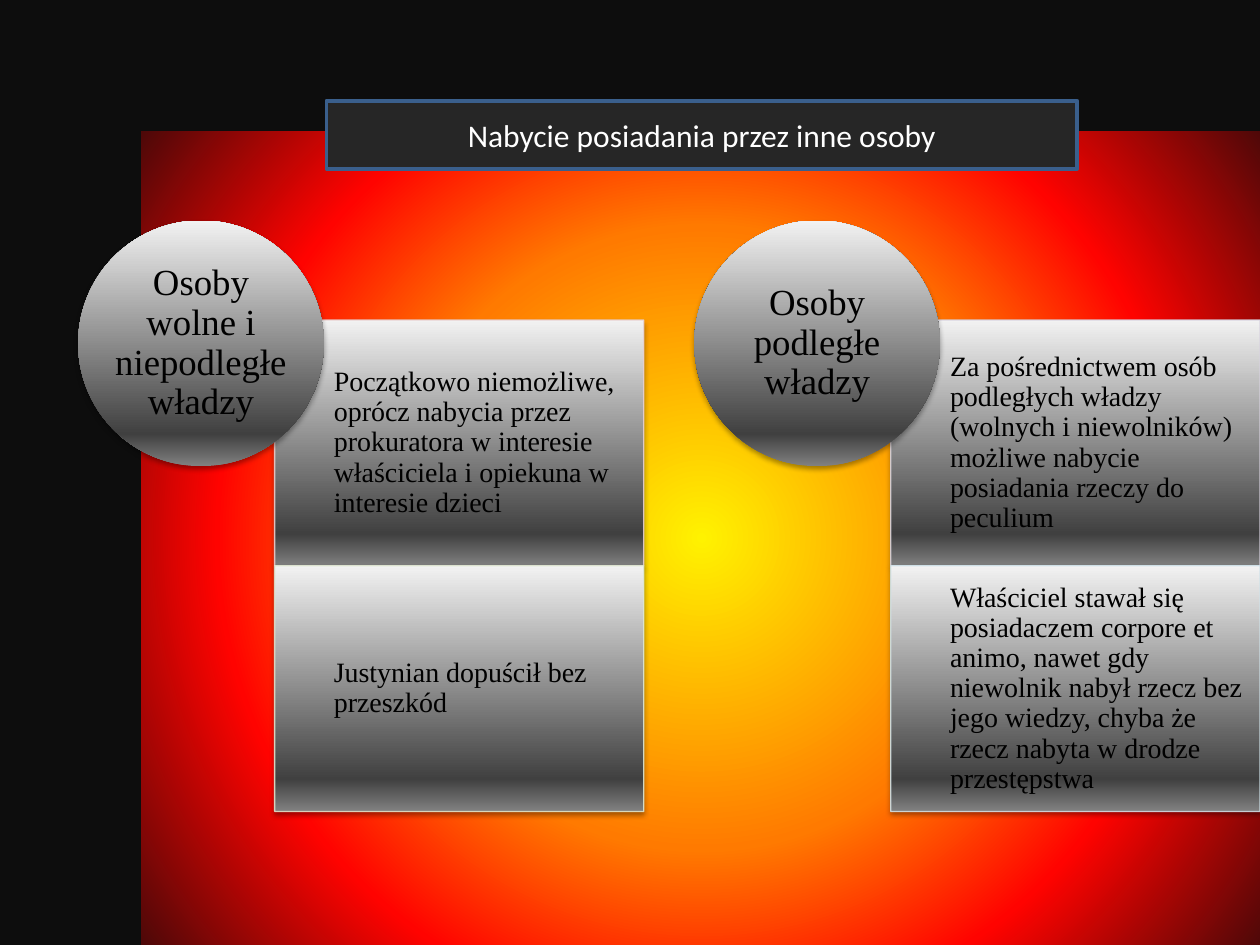
"""Build a slide on acquiring possession through other persons."""
from lxml import etree
from pptx import Presentation
from pptx.dml.color import RGBColor
from pptx.enum.shapes import MSO_SHAPE as SHAPE
from pptx.enum.text import MSO_ANCHOR as ANCHOR, MSO_AUTO_SIZE as AUTO_SIZE, PP_ALIGN as ALIGN
from pptx.oxml import parse_xml
from pptx.oxml.ns import nsdecls, qn
from pptx.util import Inches, Pt

COLORS = {
    "background": "0D0D0D", "title_fill": "262626", "title_line": "3A5F8C",
    "title_text": "FFFFFF", "text": "000000",
}
STEEL = [(0, "808080"), (13, "404040"), (100, "F2F2F2")]
FIRE = [(0, "FFF200"), (45, "FF7A00"), (70, "FF0300"), (100, "4D0808")]
UPWARD = '<a:lin ang="16200000" scaled="0"/>'
CENTRE = '<a:path path="circle"><a:fillToRect l="50000" t="50000" r="50000" b="50000"/></a:path>'
SERIF = "Times New Roman"
SIZE = 1.95
CARD_WIDTH = 2.93
COLUMNS = [
    (0.62, "Osoby wolne i niepodległe władzy", [
        ("E8D0D0", "Początkowo niemożliwe, oprócz nabycia przez prokuratora w interesie "
                   "właściciela i opiekuna w interesie dzieci"),
        ("DEE7D1", "Justynian dopuścił bez przeszkód"),
    ]),
    (5.51, "Osoby podległe władzy", [
        ("D8D3E0", "Za pośrednictwem osób podległych władzy (wolnych i niewolników) "
                   "możliwe nabycie posiadania rzeczy do peculium"),
        ("D0E3EA", "Właściciel stawał się posiadaczem corpore et animo, nawet gdy niewolnik "
                   "nabył rzecz bez jego wiedzy, chyba że rzecz nabyta w drodze przestępstwa"),
    ]),
]


def add_gradient_shape(kind, box, stops, direction, line=None, shadow=True):
    shape = slide.shapes.add_shape(kind, *map(Inches, box))
    shape.fill.background()
    properties = shape._element.spPr
    stop_xml = "".join(
        f'<a:gs pos="{position * 1000}"><a:srgbClr val="{color}"/></a:gs>' for position, color in stops)
    gradient = parse_xml(
        f'<a:gradFill {nsdecls("a")} rotWithShape="1"><a:gsLst>{stop_xml}</a:gsLst>{direction}</a:gradFill>')
    properties.replace(properties.find(qn("a:noFill")), gradient)
    if line:
        shape.line.color.rgb = RGBColor.from_string(line)
        shape.line.width = Pt(0.75)
        line_color = properties.find(qn("a:ln")).find(".//" + qn("a:srgbClr"))
        etree.SubElement(line_color, qn("a:alpha"), val="90000")
    else:
        shape.line.fill.background()
    shape.shadow.inherit = False
    if shadow:
        properties.find(qn("a:effectLst")).append(parse_xml(
            f'<a:outerShdw {nsdecls("a")} blurRad="40000" dist="23000" dir="5400000" rotWithShape="0">'
            '<a:srgbClr val="000000"><a:alpha val="35000"/></a:srgbClr></a:outerShdw>'))
    return shape


def set_text(shape, text, size, font, color, align, spacing=None, margins=None):
    frame = shape.text_frame
    frame.text = text
    frame_format = {"word_wrap": True, "auto_size": AUTO_SIZE.NONE, "vertical_anchor": ANCHOR.MIDDLE}
    if margins:
        sides = ("margin_left", "margin_top", "margin_right", "margin_bottom")
        frame_format.update(zip(sides, map(Inches, margins)))
    for name, value in frame_format.items():
        setattr(frame, name, value)
    paragraph = frame.paragraphs[0]
    paragraph.alignment = align
    paragraph.line_spacing = spacing
    run_font = paragraph.runs[0].font
    for name, value in {"size": Pt(size), "name": font, "bold": False}.items():
        setattr(run_font, name, value)
    run_font.color.rgb = RGBColor.from_string(COLORS[color])


presentation = Presentation()
presentation.slide_width, presentation.slide_height = Inches(10), Inches(7.5)
slide = presentation.slides.add_slide(presentation.slide_layouts[5])
slide.background.fill.solid()
slide.background.fill.fore_color.rgb = RGBColor.from_string(COLORS["background"])

add_gradient_shape(SHAPE.RECTANGLE, (1.12, 1.04, 8.9, 6.46), FIRE, CENTRE, shadow=False)

for left, heading, cards in COLUMNS:
    for row, (line, text) in enumerate(cards):
        box = (left + 1.56, 2.54 + row * SIZE, CARD_WIDTH, SIZE)
        card = add_gradient_shape(SHAPE.RECTANGLE, box, STEEL, UPWARD, line)
        set_text(card, text, 16, SERIF, "text", ALIGN.LEFT, 0.9, (0.47, 0.12, 0.12, 0.12))
    circle = add_gradient_shape(SHAPE.OVAL, (left, 1.75, SIZE, SIZE), STEEL, UPWARD)
    set_text(circle, heading, 21, SERIF, "text", ALIGN.CENTER, 0.9, (0, 0, 0, 0))

title = slide.shapes.title
for name, value in {"left": 2.59, "top": 0.8, "width": 5.96, "height": 0.54}.items():
    setattr(title, name, Inches(value))
title.fill.solid()
title.fill.fore_color.rgb = RGBColor.from_string(COLORS["title_fill"])
title.line.color.rgb = RGBColor.from_string(COLORS["title_line"])
title.line.width = Pt(2)
set_text(title, "Nabycie posiadania przez inne osoby", 18, "Calibri", "title_text", ALIGN.CENTER)
slide.shapes._spTree.append(title._element)

presentation.save("out.pptx")
